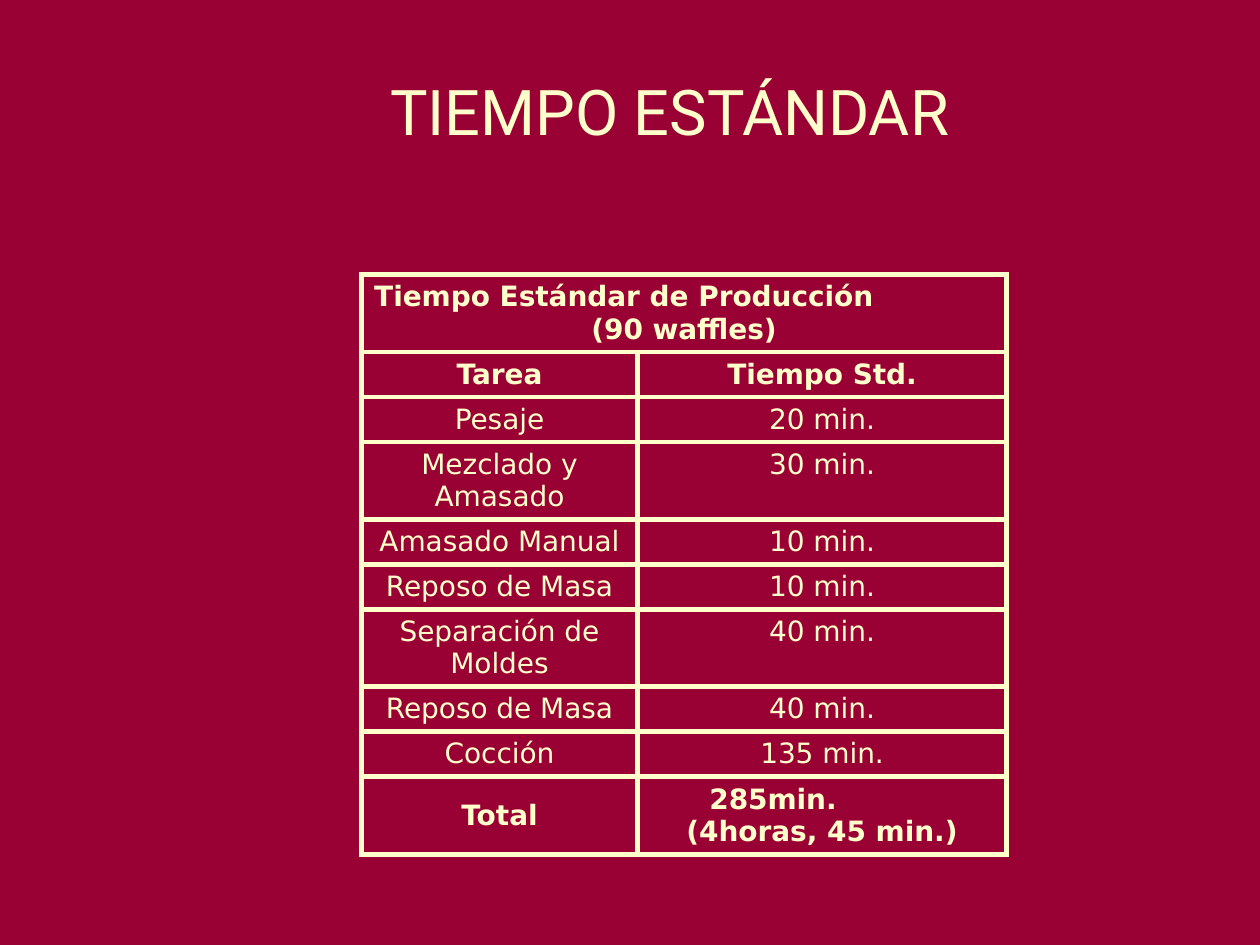
from lxml import etree
from pptx import Presentation
from pptx.dml.color import RGBColor
from pptx.enum.text import MSO_ANCHOR, PP_ALIGN
from pptx.oxml.ns import qn
from pptx.util import Inches, Pt

CENTER, LEFT = PP_ALIGN.CENTER, PP_ALIGN.LEFT
TOP, MIDDLE = MSO_ANCHOR.TOP, MSO_ANCHOR.MIDDLE
MAROON = RGBColor(0x99, 0x00, 0x33)
CREAM = RGBColor(0xFF, 0xFF, 0xCC)
TITLE_ONLY = 5

TITLE = "TIEMPO ESTÁNDAR"
ROWS = [
    ("Tiempo Estándar de Producción\n(90 waffles)", ""),
    ("Tarea", "Tiempo Std."),
    ("Pesaje", "20 min."),
    ("Mezclado y Amasado", "30 min."),
    ("Amasado Manual", "10 min."),
    ("Reposo de Masa", "10 min."),
    ("Separación de Moldes", "40 min."),
    ("Reposo de Masa", "40 min."),
    ("Cocción", "135 min."),
    ("Total", "285min.\n(4horas, 45 min.)"),
]
LAST = len(ROWS) - 1
BOLD_ROWS = (0, 1, LAST)
COLUMN_WIDTHS = (2.19, 2.93)
ROW_HEIGHTS = [0.57] + [0.32] * (LAST - 1) + [0.62]
FIRST_LINE_INDENTS = {(0, 0): 0, (LAST, 1): 0.47}


def format_text(paragraph, font_name, size, bold, alignment):
    paragraph.alignment = alignment
    for run in paragraph.runs:
        run.font.name = font_name
        run.font.size = Pt(size)
        run.font.bold = bold
        run.font.color.rgb = CREAM


def add_borders(cell):
    properties = cell._tc.get_or_add_tcPr()
    for side in ("a:lnL", "a:lnR", "a:lnT", "a:lnB"):
        line = etree.SubElement(properties, qn(side), w=str(Pt(3)))
        fill = etree.SubElement(line, qn("a:solidFill"))
        etree.SubElement(fill, qn("a:srgbClr"), val=str(CREAM))


def add_title(slide):
    title = slide.shapes.title
    title.left, title.top = Inches(1.77), Inches(0.52)
    title.width, title.height = Inches(7.09), Inches(0.71)
    frame = title.text_frame
    frame.text = TITLE
    frame.word_wrap = False
    frame.vertical_anchor = MIDDLE
    format_text(frame.paragraphs[0], "Roboto", 36, False, CENTER)


def add_time_table(slide):
    table = slide.shapes.add_table(
        len(ROWS), len(COLUMN_WIDTHS), Inches(2.87), Inches(2.18),
        Inches(sum(COLUMN_WIDTHS)), Inches(sum(ROW_HEIGHTS))).table
    table.first_row = table.horz_banding = False
    for column, width in zip(table.columns, COLUMN_WIDTHS):
        column.width = Inches(width)
    for row, height in zip(table.rows, ROW_HEIGHTS):
        row.height = Inches(height)
    table.cell(0, 0).merge(table.cell(0, 1))

    for row_index, texts in enumerate(ROWS):
        for column_index, text in enumerate(texts):
            cell = table.cell(row_index, column_index)
            cell.text_frame.text = text
            cell.vertical_anchor = MIDDLE if row_index == LAST else TOP
            add_borders(cell)
            cell.fill.solid()
            cell.fill.fore_color.rgb = MAROON
            for paragraph in cell.text_frame.paragraphs:
                format_text(paragraph, "DejaVu Sans", 16, row_index in BOLD_ROWS, CENTER)

    for (row_index, column_index), indent in FIRST_LINE_INDENTS.items():
        paragraph = table.cell(row_index, column_index).text_frame.paragraphs[0]
        paragraph.alignment = LEFT
        paragraph._p.get_or_add_pPr().set("marL", str(Inches(indent)))


def main():
    presentation = Presentation()
    presentation.slide_width, presentation.slide_height = Inches(10), Inches(7.5)
    slide = presentation.slides.add_slide(presentation.slide_layouts[TITLE_ONLY])
    slide.background.fill.solid()
    slide.background.fill.fore_color.rgb = MAROON
    add_time_table(slide)
    add_title(slide)
    presentation.save("out.pptx")


if __name__ == "__main__":
    main()
